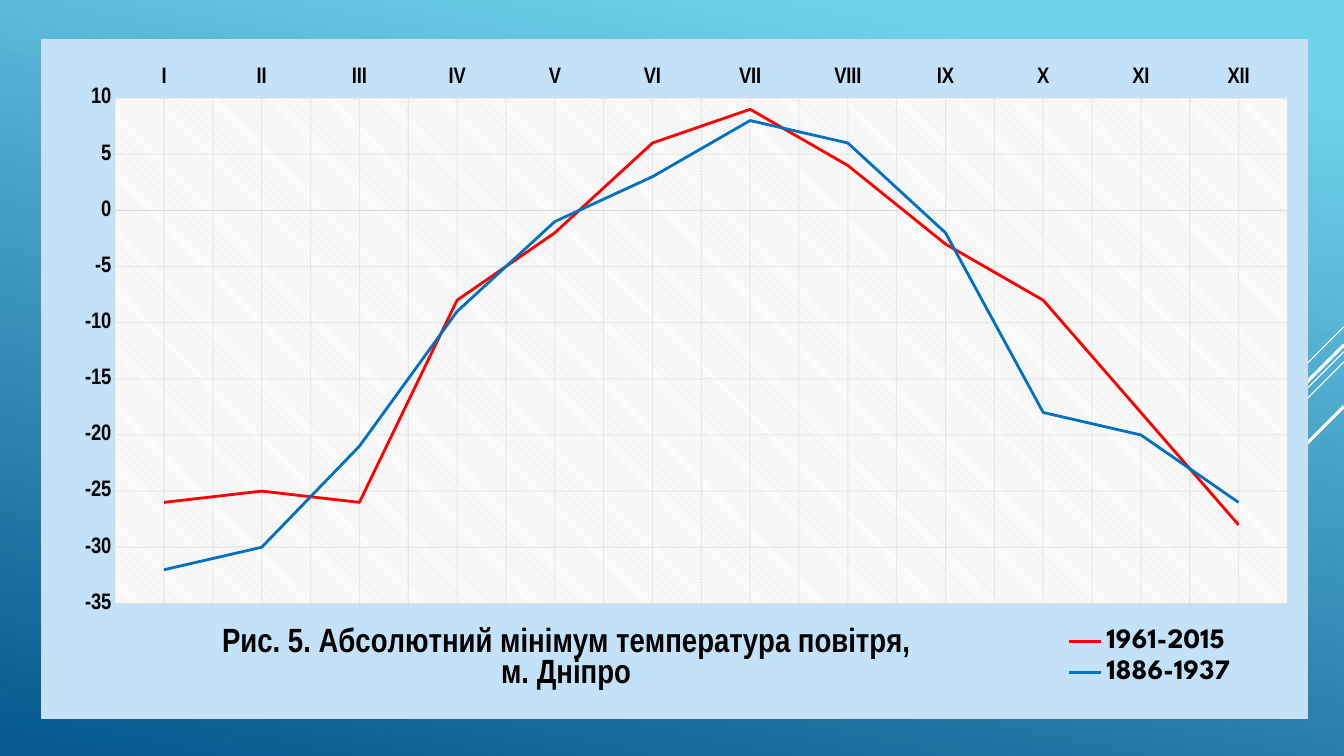
"""Build a slide with a line chart of monthly minimum air temperatures."""
import copy

import pptx
import pptx.chart.data
import pptx.dml.color
import pptx.enum.chart
import pptx.enum.shapes
import pptx.enum.text
import pptx.oxml
import pptx.oxml.ns
import pptx.util

Cm = pptx.util.Cm
Pt = pptx.util.Pt
RGBColor = pptx.dml.color.RGBColor
qn = pptx.oxml.ns.qn

BLACK = RGBColor(0x00, 0x00, 0x00)
WHITE = RGBColor(0xFF, 0xFF, 0xFF)
GREY = RGBColor(0xD9, 0xD9, 0xD9)
RED = RGBColor(0xFF, 0x00, 0x00)
BLUE = RGBColor(0x00, 0x70, 0xC0)
SKY = RGBColor(0x6E, 0xD2, 0xEB)
NAVY = RGBColor(0x06, 0x58, 0x8E)
PALE = RGBColor(0xC3, 0xE2, 0xF7)
NARROW = "Arial Narrow"
SPARTAN = "League Spartan"
WIDTH = 33.87
NS = pptx.oxml.ns.nsdecls("c", "a")


def style(font, name, size, color, bold=True):
    font.name = name
    font.size = Pt(size)
    font.bold = bold
    font.color.rgb = color


def place(node, index, sides, inner=False):
    old = node.find(qn("c:layout"))
    if old is not None:
        node.remove(old)
    target = '<c:layoutTarget val="inner"/>' if inner else ""
    modes = "".join(f'<c:{key}Mode val="edge"/>' for key in "xy")
    sizes = "".join(f'<c:{key} val="{val}"/>' for key, val in zip("xywh", sides))
    node.insert(index, pptx.oxml.parse_xml(
        f"<c:layout {NS}><c:manualLayout>{target}{modes}{sizes}"
        "</c:manualLayout></c:layout>"))


deck = pptx.Presentation()
deck.slide_width = Cm(WIDTH)
deck.slide_height = Cm(19.05)
slide = deck.slides.add_slide(deck.slide_layouts[6])

back = slide.background.fill
back.gradient()
back.gradient_angle = 258
for stop, (place_at, color) in zip(back.gradient_stops, [(0.1, SKY), (1, NAVY)]):
    stop.position = place_at
    stop.color.rgb = color

for top, reach, weight in [(8.23, 2.54, 0.75), (8.86, 8.28, 0.75), (9.12, 5.27, 0.75),
                           (8.69, 4.85, 2.25), (10.24, 3.53, 2.25)]:
    stripe = slide.shapes.add_connector(
        pptx.enum.shapes.MSO_CONNECTOR.STRAIGHT,
        Cm(WIDTH), Cm(top), Cm(WIDTH - reach), Cm(top + reach))
    stripe.line.color.rgb = WHITE
    stripe.line.width = Pt(weight)
    stripe._element.spPr.append(pptx.oxml.parse_xml(f"<a:effectLst {NS}/>"))

data = pptx.chart.data.CategoryChartData()
data.categories = ["I", "II", "III", "IV", "V", "VI",
                   "VII", "VIII", "IX", "X", "XI", "XII"]
data.add_series("1961-2015", [-26, -25, -26, -8, -2, 6, 9, 4, -3, -8, -18, -28])
data.add_series("1886-1937", [-32, -30, -21, -9, -1, 3, 8, 6, -2, -18, -20, -26])
chart = slide.shapes.add_chart(
    pptx.enum.chart.XL_CHART_TYPE.LINE,
    Cm(1.04), Cm(0.99), Cm(31.93), Cm(17.12), data).chart
style(chart.font, SPARTAN, 10, WHITE, False)

for series, color in zip(chart.plots[0].series, [RED, BLUE]):
    series.smooth = False
    series.marker.style = pptx.enum.chart.XL_MARKER_STYLE.NONE
    series.format.line.color.rgb = color
    series.format.line.width = Pt(2)

months = chart.category_axis
degrees = chart.value_axis
for axis in (months, degrees):
    style(axis.tick_labels.font, NARROW, 16, BLACK)
    axis.major_tick_mark = pptx.enum.chart.XL_TICK_MARK.NONE
    axis.minor_tick_mark = pptx.enum.chart.XL_TICK_MARK.NONE
    axis.has_major_gridlines = True
    grid = axis.major_gridlines.format.line
    grid.color.rgb = GREY
    grid.width = Pt(0.75)
    for tint in axis._element.find(qn("c:majorGridlines")).iter(qn("a:srgbClr")):
        tint.append(pptx.oxml.parse_xml(f'<a:alpha {NS} val="54000"/>'))

months.tick_label_position = pptx.enum.chart.XL_TICK_LABEL_POSITION.HIGH
months.format.line.color.rgb = GREY
months.format.line.width = Pt(0.75)
months.has_minor_gridlines = True
major = months._element.find(qn("c:majorGridlines"))
minor = months._element.find(qn("c:minorGridlines"))
minor.append(copy.deepcopy(major[0]))
degrees.minimum_scale = -35
degrees.maximum_scale = 10
degrees.major_unit = 5
degrees.format.line.fill.background()
degrees.tick_labels.number_format = "General"
degrees.tick_labels.number_format_is_linked = False

chart.has_title = True
title = chart.chart_title.text_frame
for row, words in enumerate(["Рис. 5. Абсолютний мінімум температура повітря,",
                             "м. Дніпро"]):
    para = title.add_paragraph() if row else title.paragraphs[0]
    para.alignment = pptx.enum.text.PP_ALIGN.CENTER
    run = para.add_run()
    run.text = words
    style(run.font, NARROW, 24, BLACK)

chart.has_legend = True
legend = chart.legend
legend.position = pptx.enum.chart.XL_LEGEND_POSITION.RIGHT
legend.include_in_layout = False
style(legend.font, SPARTAN, 20, BLACK)

space = chart._chartSpace
plot = space.chart.plotArea
place(plot, 0, (0.058, 0.086, 0.926, 0.745), True)
place(chart.chart_title._element, 1, (0.14, 0.86))
place(legend._element, 1, (0.8, 0.86, 0.15, 0.1))
plot.append(pptx.oxml.parse_xml(
    f'<c:spPr {NS}><a:pattFill prst="ltDnDiag">'
    f'<a:fgClr><a:srgbClr val="{GREY}"/></a:fgClr>'
    f'<a:bgClr><a:srgbClr val="{WHITE}"/></a:bgClr></a:pattFill></c:spPr>'))
space.chart.addnext(pptx.oxml.parse_xml(
    f'<c:spPr {NS}><a:solidFill><a:srgbClr val="{PALE}"/></a:solidFill>'
    f'<a:ln w="{Pt(0.75)}"><a:solidFill><a:srgbClr val="{GREY}"/></a:solidFill></a:ln></c:spPr>'))
if space.find(qn("c:roundedCorners")) is None:
    space.find(qn("c:date1904")).addnext(
        pptx.oxml.parse_xml(f'<c:roundedCorners {NS} val="0"/>'))

deck.save("out.pptx")
